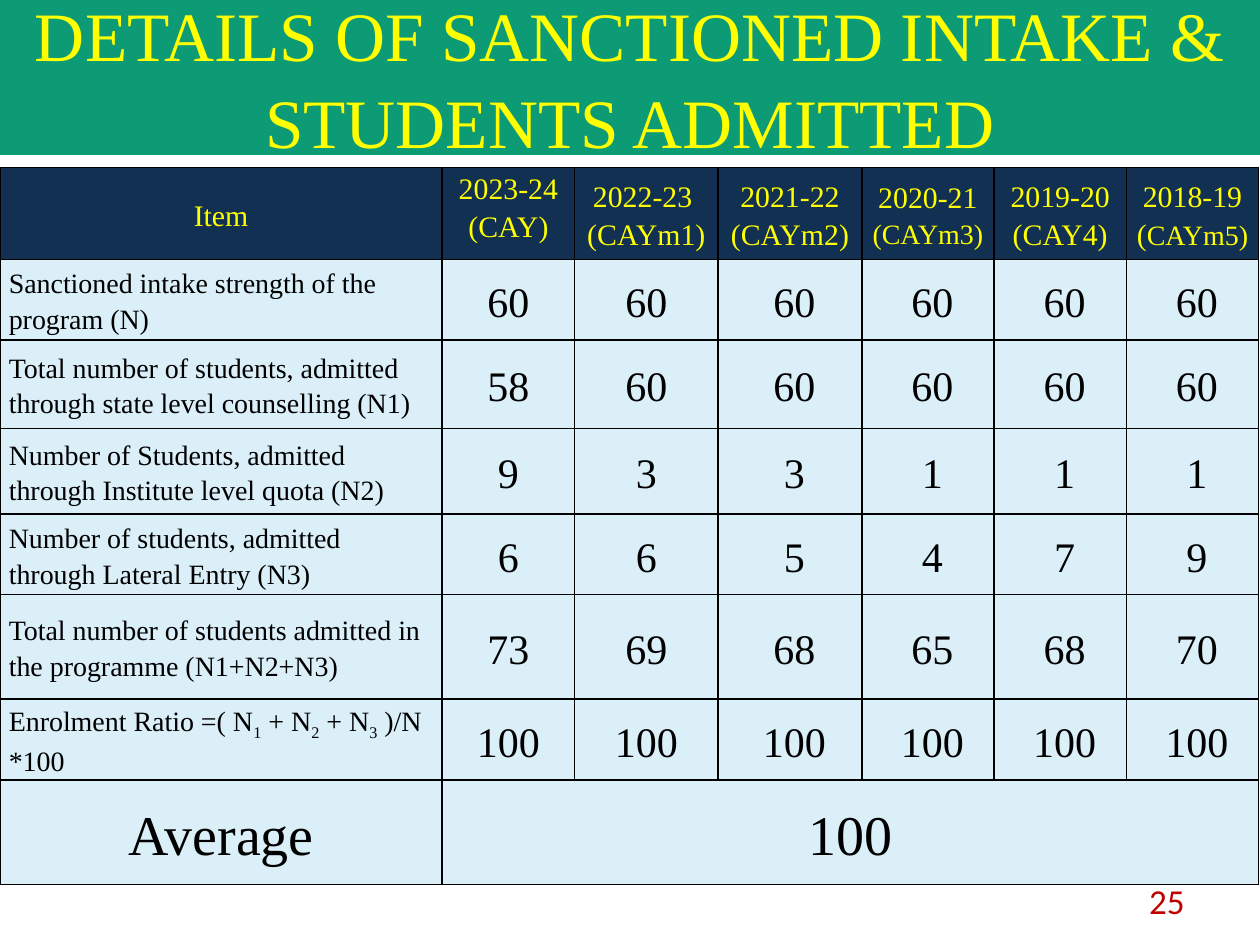
"""Build the slide on sanctioned intake and students admitted."""
from lxml import etree
from pptx import Presentation
from pptx.dml.color import RGBColor
from pptx.enum.shapes import MSO_SHAPE
from pptx.enum.text import MSO_ANCHOR, PP_ALIGN
from pptx.oxml.ns import qn
from pptx.util import Inches, Pt

RECTANGLE = MSO_SHAPE.RECTANGLE
TOP, MIDDLE = MSO_ANCHOR.TOP, MSO_ANCHOR.MIDDLE
LEFT, CENTER, RIGHT = PP_ALIGN.LEFT, PP_ALIGN.CENTER, PP_ALIGN.RIGHT
SERIF, SANS = "Times New Roman", "Calibri"
COLORS = {
    "banner": "0C9B74",
    "header": "113052",
    "body": "DBEFF9",
    "yellow": "FFFF00",
    "black": "000000",
    "page": "C00000",
}

COLUMN_WIDTHS = [3.51, 1.05, 1.14, 1.14, 1.05, 1.05, 1.05]
ROW_HEIGHTS = [0.73, 0.64, 0.7, 0.68, 0.64, 0.83, 0.64, 0.83]
HEADINGS = [
    [[("Item", 17)]],
    [[("2023-24", 17)], [("(CAY)", 17)]],
    [[("2022-23 ", 17)], [("(CAYm1)", 17)]],
    [[("2021-22 (CAYm2)", 17)]],
    [[("2020-21 ", 17), ("(CAYm3)", 16)]],
    [[("2019-20 (CAY4)", 17)]],
    [[("2018-19 (", 17), ("CAYm5)", 16)]],
]
ITEMS = [
    (["Sanctioned intake strength of the program (N)"], [60] * 6),
    (["Total number of students, admitted through state level counselling (N1)"],
     [58, 60, 60, 60, 60, 60]),
    (["Number of Students, admitted through Institute level quota (N2)"],
     [9, 3, 3, 1, 1, 1]),
    (["Number of students, admitted through Lateral Entry (N3)"],
     [6, 6, 5, 4, 7, 9]),
    (["Total number of students admitted in the programme (N1+N2+N3)"],
     [73, 69, 68, 65, 68, 70]),
    (["Enrolment Ratio =( N", "1", " + N", "2", " + N", "3", " )/N *100"],
     [100] * 6),
]


def add_run(paragraph, text, size, color, font=SERIF):
    run = paragraph.add_run()
    run.text = text
    run.font.size = Pt(size)
    run.font.name = font
    run.font.color.rgb = RGBColor.from_string(COLORS[color])
    return run


def fill_cell(cell, paragraphs, fill="body", color="black", align=CENTER):
    cell.fill.solid()
    cell.fill.fore_color.rgb = RGBColor.from_string(COLORS[fill])
    cell.vertical_anchor = MIDDLE
    cell.margin_left = cell.margin_right = Inches(0.07)
    cell.margin_top = cell.margin_bottom = 0
    for index, runs in enumerate(paragraphs):
        frame = cell.text_frame
        paragraph = frame.add_paragraph() if index else frame.paragraphs[0]
        paragraph.alignment = align
        paragraph.line_spacing = 1.15
        for text, size in runs:
            add_run(paragraph, text, size, color)


prs = Presentation()
prs.slide_width, prs.slide_height = Inches(10), Inches(7.5)
slide = prs.slides.add_slide(prs.slide_layouts[6])

banner = slide.shapes.add_shape(
    RECTANGLE, 0, Inches(-0.03), Inches(10), Inches(1.26))
banner.shadow.inherit = False
banner.fill.solid()
banner.fill.fore_color.rgb = RGBColor.from_string(COLORS["banner"])
banner.line.fill.background()
banner.text_frame.word_wrap = True
banner.text_frame.vertical_anchor = MIDDLE
title = banner.text_frame.paragraphs[0]
title.alignment = CENTER
title.line_spacing = 1.04
add_run(title, "DETAILS OF SANCTIONED INTAKE & STUDENTS ADMITTED", 39.6, "yellow")

intake = slide.shapes.add_table(
    len(ROW_HEIGHTS), len(COLUMN_WIDTHS),
    0, Inches(1.33), Inches(10), Inches(5.7)).table
intake.first_row = intake.horz_banding = False
for column, width in zip(intake.columns, COLUMN_WIDTHS):
    column.width = Inches(width)
for row, height in zip(intake.rows, ROW_HEIGHTS):
    row.height = Inches(height)

for col, heading in enumerate(HEADINGS):
    fill_cell(intake.cell(0, col), heading, "header", "yellow")
intake.cell(0, 1).vertical_anchor = TOP

for row, (label, counts) in enumerate(ITEMS, start=1):
    item = intake.cell(row, 0)
    fill_cell(item, [[(part, 16) for part in label]], align=LEFT)
    for subscript in item.text_frame.paragraphs[0].runs[1::2]:
        subscript.font._element.set("baseline", "-25000")
    for col, count in enumerate(counts, start=1):
        cell = intake.cell(row, col)
        fill_cell(cell, [[(str(count), 24)]])
        if col > 2:
            paragraph = cell.text_frame.paragraphs[0]
            paragraph.space_before = Pt(4.2)
            properties = paragraph._p.get_or_add_pPr()
            properties.set("marL", str(Inches(0.07)))
            properties.set("indent", "0")

average_row = len(ROW_HEIGHTS) - 1
intake.cell(average_row, 1).merge(intake.cell(average_row, 6))
fill_cell(intake.cell(average_row, 0), [[("Average", 32)]])
fill_cell(intake.cell(average_row, 1), [[("100", 32)]])

for cell in intake.iter_cells():
    properties = cell._tc.get_or_add_tcPr()
    for position, side in enumerate(("a:lnL", "a:lnR", "a:lnT", "a:lnB")):
        border = etree.Element(qn(side), w=str(Pt(1)))
        solid = etree.SubElement(border, qn("a:solidFill"))
        etree.SubElement(solid, qn("a:srgbClr"), val=COLORS["black"])
        properties.insert(position, border)

page_box = slide.shapes.add_textbox(
    Inches(7.17), Inches(6.95), Inches(2.33), Inches(0.4))
page_box.text_frame.word_wrap = True
page_box.text_frame.vertical_anchor = MIDDLE
page_number = page_box.text_frame.paragraphs[0]
page_number.alignment = RIGHT
add_run(page_number, "25", 20, "page", SANS)

prs.save("out.pptx")
